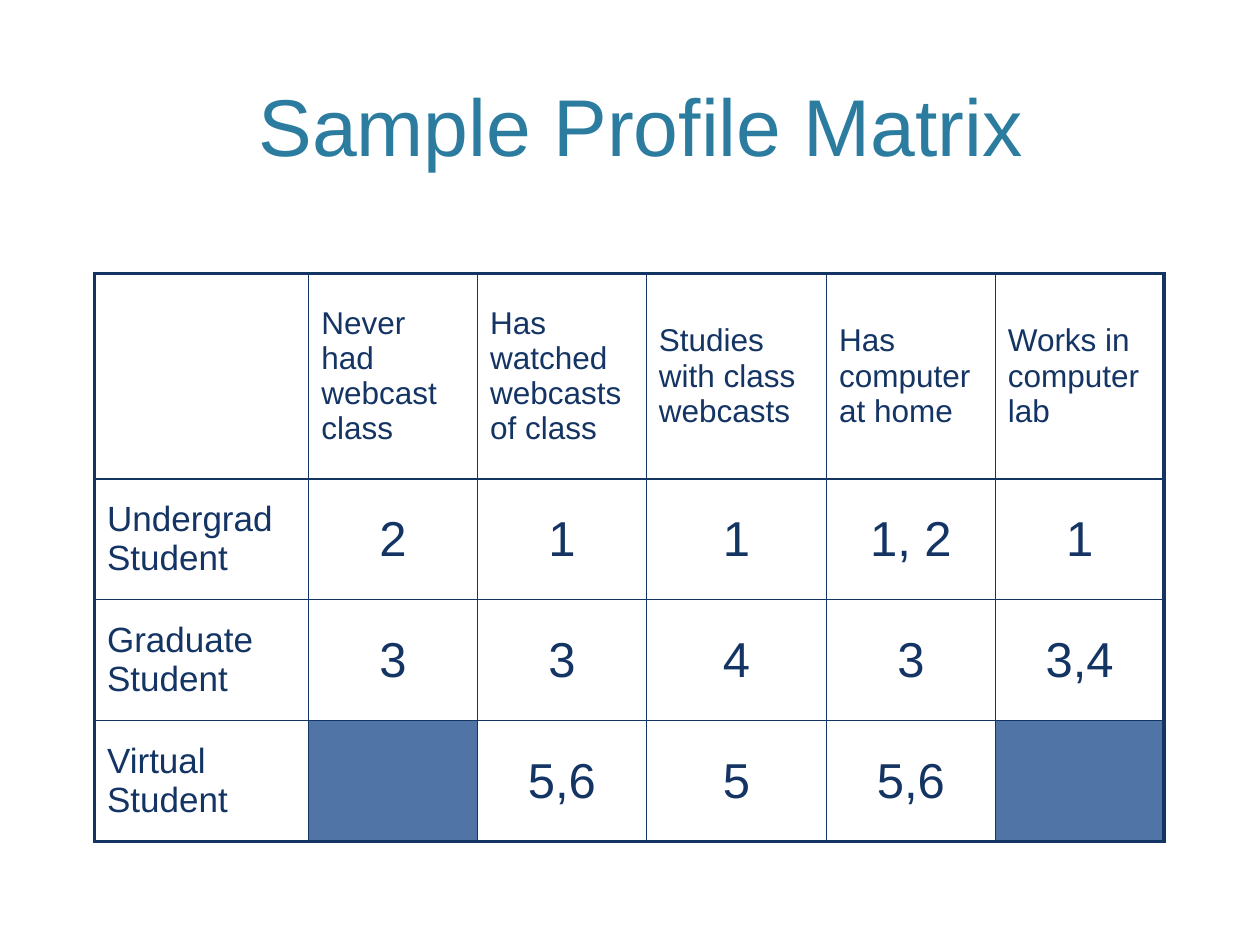
"""Build the sample profile matrix slide."""
from lxml.etree import SubElement
from pptx import Presentation
from pptx.dml.color import RGBColor
from pptx.enum.text import MSO_ANCHOR, PP_ALIGN
from pptx.oxml.ns import qn
from pptx.util import Inches, Pt

TITLE = "Sample Profile Matrix"
BLOCKED = None
MATRIX = [
    ["", "Never had webcast class", "Has watched webcasts of class",
     "Studies with class webcasts", "Has computer at home", "Works in computer lab"],
    ["Undergrad Student", "2", "1", "1", "1, 2", "1"],
    ["Graduate Student", "3", "3", "4", "3", "3,4"],
    ["Virtual Student", BLOCKED, "5,6", "5", "5,6", BLOCKED],
]
COLUMN_WIDTHS = [1.7, 1.34, 1.34, 1.43, 1.34, 1.34]
ROW_HEIGHTS = [1.63, 0.96, 0.96, 0.96]
TEAL, NAVY, BLUE = "2C7C9F", "143464", "5074A5"
OUTER_LINE, INNER_LINE = 2.25, 1
HEADER_SIZE, LABEL_SIZE, VALUE_SIZE = 18, 20, 28


def color(hex_code):
    return RGBColor.from_string(hex_code)


def write(text_frame, text, size, hex_code, alignment):
    text_frame.text = text
    paragraph = text_frame.paragraphs[0]
    paragraph.alignment = alignment
    for run in paragraph.runs:
        run.font.name = "Arial"
        run.font.size = Pt(size)
        run.font.bold = False
        run.font.color.rgb = color(hex_code)


def draw_borders(cell, outer_sides):
    properties = cell._tc.get_or_add_tcPr()
    for side, is_outer in outer_sides.items():
        width = Pt(OUTER_LINE if is_outer else INNER_LINE)
        border = SubElement(properties, qn(f"a:ln{side}"), w=str(width))
        SubElement(SubElement(border, qn("a:solidFill")), qn("a:srgbClr"), val=NAVY)


def fill_cell(cell, text, row, column):
    draw_borders(cell, {
        "L": column == 0,
        "R": column == len(COLUMN_WIDTHS) - 1,
        "T": row == 0,
        "B": row == len(ROW_HEIGHTS) - 1,
    })
    cell.vertical_anchor = MSO_ANCHOR.MIDDLE
    if text is BLOCKED:
        cell.fill.solid()
        cell.fill.fore_color.rgb = color(BLUE)
        return
    cell.fill.background()
    size = HEADER_SIZE if row == 0 else LABEL_SIZE if column == 0 else VALUE_SIZE
    alignment = PP_ALIGN.CENTER if row and column else PP_ALIGN.LEFT
    write(cell.text_frame, text, size, NAVY, alignment)


def add_title(slide):
    title = slide.shapes.add_textbox(Inches(1), Inches(0.25), Inches(8.17), Inches(1.17))
    title.text_frame.word_wrap = True
    title.text_frame.vertical_anchor = MSO_ANCHOR.BOTTOM
    write(title.text_frame, TITLE, 46, TEAL, PP_ALIGN.CENTER)


def add_matrix(slide):
    matrix = slide.shapes.add_table(
        len(ROW_HEIGHTS), len(COLUMN_WIDTHS), Inches(0.75), Inches(2.17),
        Inches(sum(COLUMN_WIDTHS)), Inches(sum(ROW_HEIGHTS))).table
    matrix.first_row = matrix.horz_banding = False
    for column, width in zip(matrix.columns, COLUMN_WIDTHS):
        column.width = Inches(width)
    for row, height in zip(matrix.rows, ROW_HEIGHTS):
        row.height = Inches(height)
    for row, texts in enumerate(MATRIX):
        for column, text in enumerate(texts):
            fill_cell(matrix.cell(row, column), text, row, column)


def main():
    presentation = Presentation()
    presentation.slide_width, presentation.slide_height = Inches(10), Inches(7.5)
    slide = presentation.slides.add_slide(presentation.slide_layouts[6])
    add_title(slide)
    add_matrix(slide)
    presentation.save("out.pptx")


if __name__ == "__main__":
    main()
